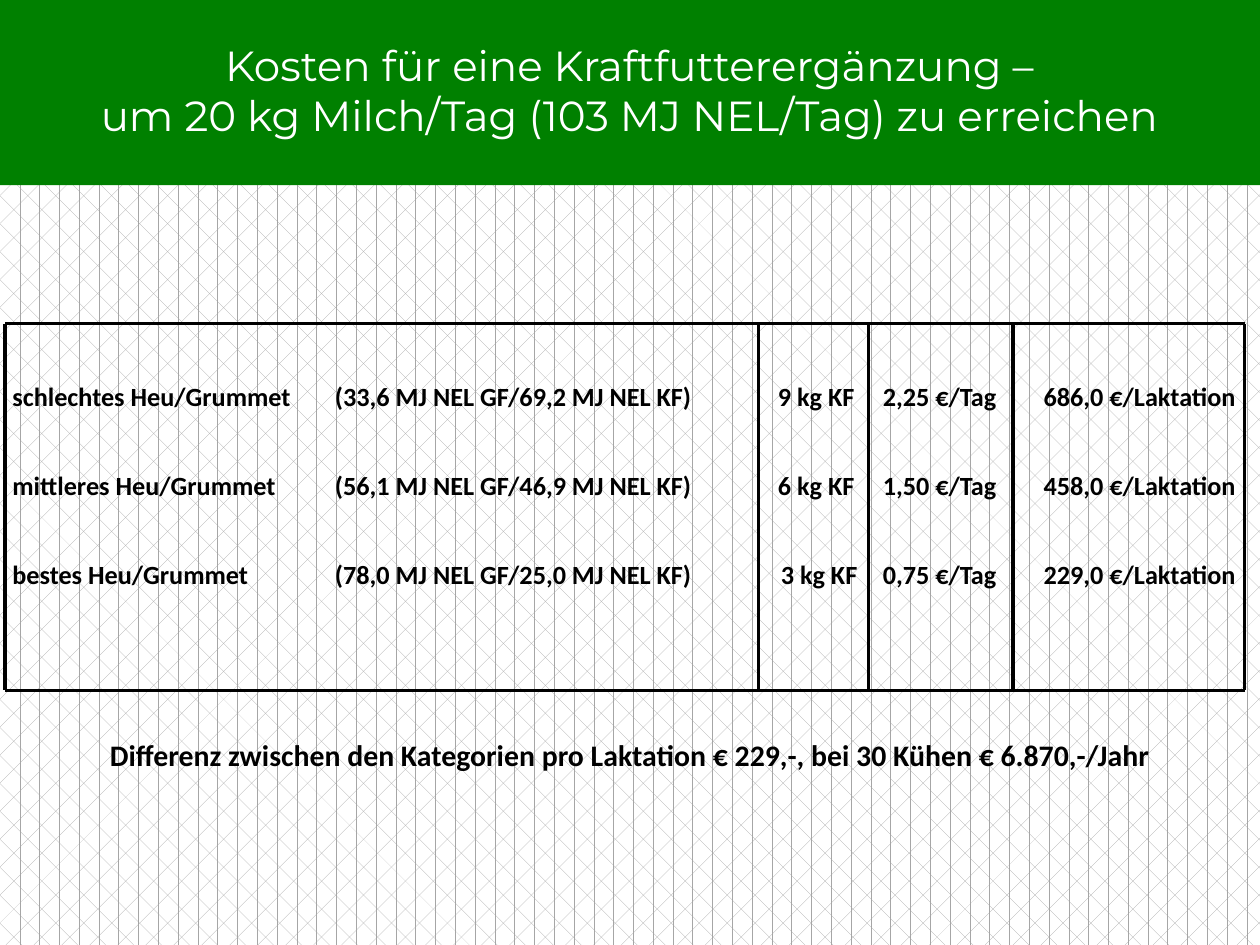
import pptx
import pptx.util
import pptx.dml.color
import pptx.enum.dml
import pptx.enum.shapes
import pptx.enum.text
import pptx.oxml.xmlchemy
from pptx.util import Inches

COLORS = {"green": "008000", "white": "FFFFFF", "black": "000000", "grid": "A6A6A6"}
ALIGN = pptx.enum.text.PP_ALIGN
ANCHOR = pptx.enum.text.MSO_ANCHOR


def rgb(name):
    return pptx.dml.color.RGBColor.from_string(COLORS[name])


class SlideBuilder:
    body_font = "Calibri"
    title_font = "Montserrat"
    line_width = 1.75

    def __init__(self, s):
        self.s = s

    def background(self):
        fill = self.s.background.fill
        fill.patterned()
        fill.pattern = pptx.enum.dml.MSO_PATTERN.DIVOT
        fill.fore_color.rgb = rgb("grid")
        fill.back_color.rgb = rgb("white")

    def band(self, x, y, w, h, color):
        sp = self.s.shapes.add_shape(
            pptx.enum.shapes.MSO_SHAPE.RECTANGLE,
            Inches(x), Inches(y), Inches(w), Inches(h))
        sp.shadow.inherit = False
        sp.fill.solid()
        sp.fill.fore_color.rgb = rgb(color)
        sp.line.fill.background()

    def text(self, x, y, w, h, lines, size, font=body_font, color="black", bold=True,
             align=ALIGN.CENTER, anchor=ANCHOR.TOP, gap=0, tabs=()):
        sp = self.s.shapes.add_textbox(Inches(x), Inches(y), Inches(w), Inches(h))
        tf = sp.text_frame
        tf.word_wrap = True
        tf.vertical_anchor = anchor
        for i, line in enumerate(lines):
            p = tf.add_paragraph() if i else tf.paragraphs[0]
            p.text = line
            p.alignment = align
            p.space_before = pptx.util.Pt(gap if i else 0)
            for r in p.runs:
                r.font.name = font
                r.font.size = pptx.util.Pt(size)
                r.font.bold = bold
                r.font.color.rgb = rgb(color)
            if tabs:
                self.tab_stops(p, tabs)
        return tf

    def tab_stops(self, p, tabs):
        stops = pptx.oxml.xmlchemy.OxmlElement("a:tabLst")
        for position, kind in tabs:
            stop = pptx.oxml.xmlchemy.OxmlElement("a:tab")
            stop.set("pos", str(Inches(position)))
            stop.set("algn", kind)
            stops.append(stop)
        p._p.get_or_add_pPr().insert_element_before(stops, "a:defRPr", "a:extLst")

    def line(self, x1, y1, x2, y2):
        c = self.s.shapes.add_connector(
            pptx.enum.shapes.MSO_CONNECTOR.STRAIGHT,
            Inches(x1), Inches(y1), Inches(x2), Inches(y2))
        c.line.color.rgb = rgb("black")
        c.line.width = pptx.util.Pt(self.line_width)
        c._element.spPr.append(pptx.oxml.xmlchemy.OxmlElement("a:effectLst"))


def main():
    prs = pptx.Presentation()
    prs.slide_width, prs.slide_height = Inches(10), Inches(7.5)
    slide = SlideBuilder(prs.slides.add_slide(prs.slide_layouts[6]))
    slide.background()
    slide.band(0, 0, 10, 1.47, "green")
    slide.text(0.19, 0.28, 9.61, 0.86,
               ["Kosten für eine Kraftfutterergänzung –\v"
                "um 20 kg Milch/Tag (103 MJ NEL/Tag) zu erreichen"],
               24, font=slide.title_font, color="white", bold=False, anchor=ANCHOR.MIDDLE)

    feed_rows = [
        ("schlechtes Heu/Grummet", "(33,6 MJ NEL GF/69,2 MJ NEL KF)",
         "9 kg KF", "2,25 €/Tag", "686,0 €/Laktation"),
        ("mittleres Heu/Grummet", "(56,1 MJ NEL GF/46,9 MJ NEL KF)",
         "6 kg KF", "1,50 €/Tag", "458,0 €/Laktation"),
        ("bestes Heu/Grummet", "(78,0 MJ NEL GF/25,0 MJ NEL KF)",
         " 3 kg KF", "0,75 €/Tag", "229,0 €/Laktation"),
    ]
    tabs = [(0.19, "l"), (2.56, "l"), (6.38, "ctr"), (7.36, "ctr"), (9.71, "r")]
    tf = slide.text(0, 2.97, 10, 2.93, ["\t".join(row) for row in feed_rows],
                    15, align=ALIGN.LEFT, gap=32.8, tabs=tabs)
    tf.margin_right = Inches(0.06)

    left, right, top, bottom = 0.04, 9.88, 2.57, 5.48
    for y in (top, bottom):
        slide.line(left, y, right, y)
    for x in (left, 6.02, 6.89, 8.04, right):
        slide.line(x, top, x, bottom)

    slide.text(0.12, 5.8, 9.76, 0.38,
               ["Differenz zwischen den Kategorien pro Laktation € 229,-, "
                "bei 30 Kühen € 6.870,-/Jahr"], 17)
    prs.save("out.pptx")


if __name__ == "__main__":
    main()
